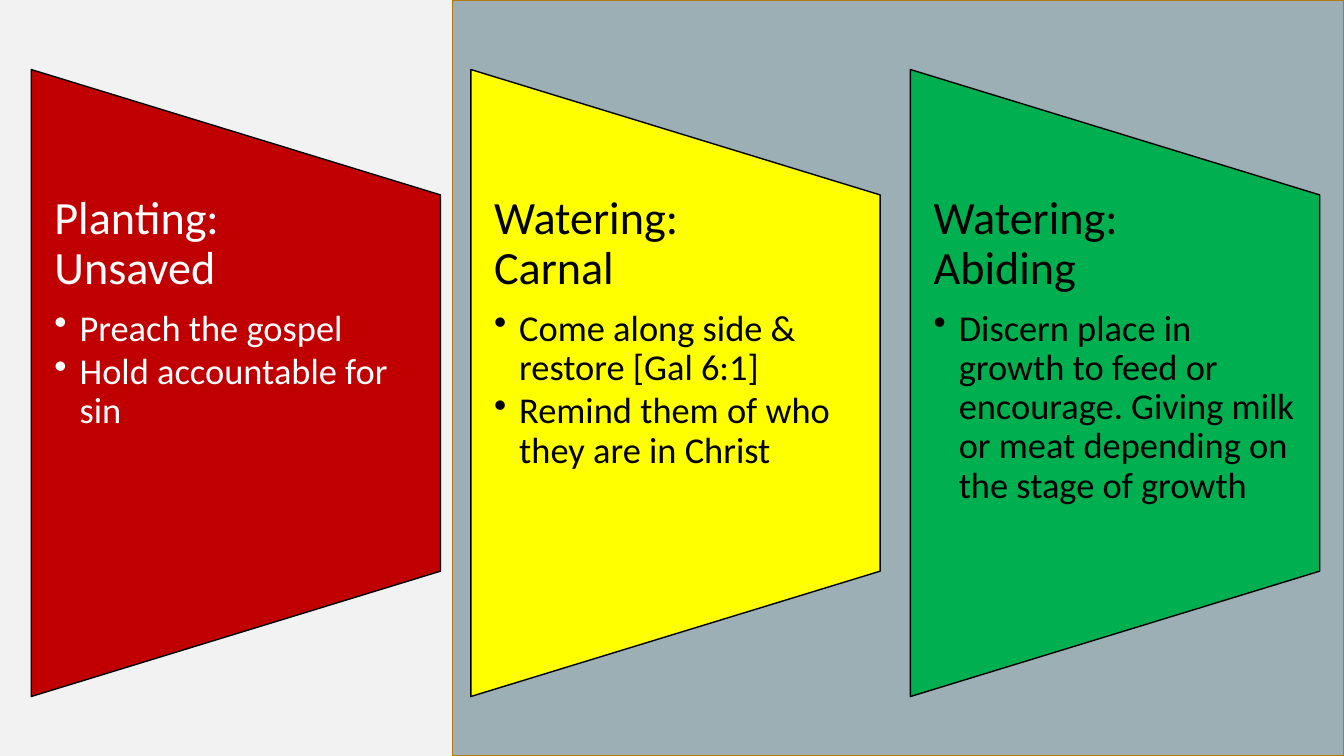
"""Build a slide of three stages of discipleship on tapering panels."""
from dataclasses import dataclass

from lxml import etree
from pptx import Presentation
from pptx import util as u
from pptx.dml.color import RGBColor
from pptx.enum import shapes, text
from pptx.oxml.ns import qn

PX = 9144
SLIDE_W, SLIDE_H = 1333, 750
BACKDROP_LEFT = 449
FIRST_LEFT, PITCH = 31, 436
PANEL_W, PANEL_H, PANEL_MIDDLE = 406, 622, 380
TEXT_TOP, TEXT_H = 193, 373
INSET, INDENT = 23, 25


@dataclass(frozen=True)
class Theme:
    """Colours, font and type sizes of the slide."""
    background: str = "F2F2F2"
    backdrop: str = "9BAFB5"
    backdrop_line: str = "B67815"
    red: str = "C00000"
    yellow: str = "FFFF00"
    green: str = "00B050"
    white: str = "FFFFFF"
    black: str = "000000"
    font: str = "Calibri"
    heading: int = 33
    body: int = 26
    heading_gap: int = 11
    body_gap: int = 3


@dataclass(frozen=True)
class Stage:
    """One panel with its heading and bullet points."""
    heading: str
    points: tuple[str, ...]
    fill: str
    ink: str


THEME = Theme()
STAGES = (
    Stage("Planting:\nUnsaved",
          ("Preach the gospel", "Hold accountable for sin"),
          THEME.red, THEME.white),
    Stage("Watering:\nCarnal",
          ("Come along side & restore [Gal 6:1]",
           "Remind them of who they are in Christ"),
          THEME.yellow, THEME.black),
    Stage("Watering:\nAbiding",
          ("Discern place in growth to feed or encourage. Giving milk "
           "or meat depending on the stage of growth",),
          THEME.green, THEME.black),
)


def px(length: int) -> u.Emu:
    """Turn px into EMU."""
    return u.Emu(length * PX)


def add_panel(slide, kind, left: int, top: int, width: int, height: int,
              fill: str, line: str):
    """Add a filled and outlined shape."""
    panel = slide.shapes.add_shape(kind, px(left), px(top), px(width), px(height))
    panel.shadow.inherit = False
    panel.fill.solid()
    panel.fill.fore_color.rgb = RGBColor.from_string(fill)
    panel.line.color.rgb = RGBColor.from_string(line)
    panel.line.width = u.Pt(1)
    return panel


def write(paragraph, words: str, size: int, gap: int, ink: str) -> None:
    """Fill a paragraph and format its runs."""
    paragraph.text = words
    paragraph.line_spacing = 0.9
    paragraph.space_after = u.Pt(gap)
    for run in paragraph.runs:
        run.font.name = THEME.font
        run.font.size = u.Pt(size)
        run.font.color.rgb = RGBColor.from_string(ink)


def add_bullet(paragraph) -> None:
    """Give a paragraph a hanging bullet."""
    paragraph.level = 1
    properties = paragraph._p.get_or_add_pPr()
    properties.set("marL", str(px(INDENT)))
    properties.set("indent", str(-px(INDENT)))
    etree.SubElement(properties, qn("a:buChar")).set("char", "•")


def add_stage(slide, stage: Stage, left: int) -> None:
    """Draw a stage's panel and its text."""
    center = left + PANEL_W // 2
    panel = add_panel(slide, shapes.MSO_SHAPE.FLOWCHART_MANUAL_OPERATION,
                      center - PANEL_H // 2, PANEL_MIDDLE - PANEL_W // 2,
                      PANEL_H, PANEL_W, stage.fill, THEME.black)
    panel.rotation = 270

    frame = slide.shapes.add_textbox(
        px(left), px(TEXT_TOP), px(PANEL_W), px(TEXT_H)).text_frame
    frame.word_wrap = True
    frame.vertical_anchor = text.MSO_ANCHOR.TOP
    frame.margin_left = frame.margin_right = px(INSET)
    frame.margin_top = frame.margin_bottom = 0
    write(frame.paragraphs[0], stage.heading, THEME.heading,
          THEME.heading_gap, stage.ink)
    for point in stage.points:
        paragraph = frame.add_paragraph()
        write(paragraph, point, THEME.body, THEME.body_gap, stage.ink)
        add_bullet(paragraph)


def main() -> None:
    """Build and save the slide."""
    deck = Presentation()
    deck.slide_width, deck.slide_height = px(SLIDE_W), px(SLIDE_H)
    slide = deck.slides.add_slide(deck.slide_layouts[6])
    slide.background.fill.solid()
    slide.background.fill.fore_color.rgb = RGBColor.from_string(THEME.background)
    add_panel(slide, shapes.MSO_SHAPE.RECTANGLE, BACKDROP_LEFT, 0,
              SLIDE_W - BACKDROP_LEFT, SLIDE_H, THEME.backdrop, THEME.backdrop_line)
    for index, stage in enumerate(STAGES):
        add_stage(slide, stage, FIRST_LEFT + index * PITCH)
    deck.save("out.pptx")


if __name__ == "__main__":
    main()
